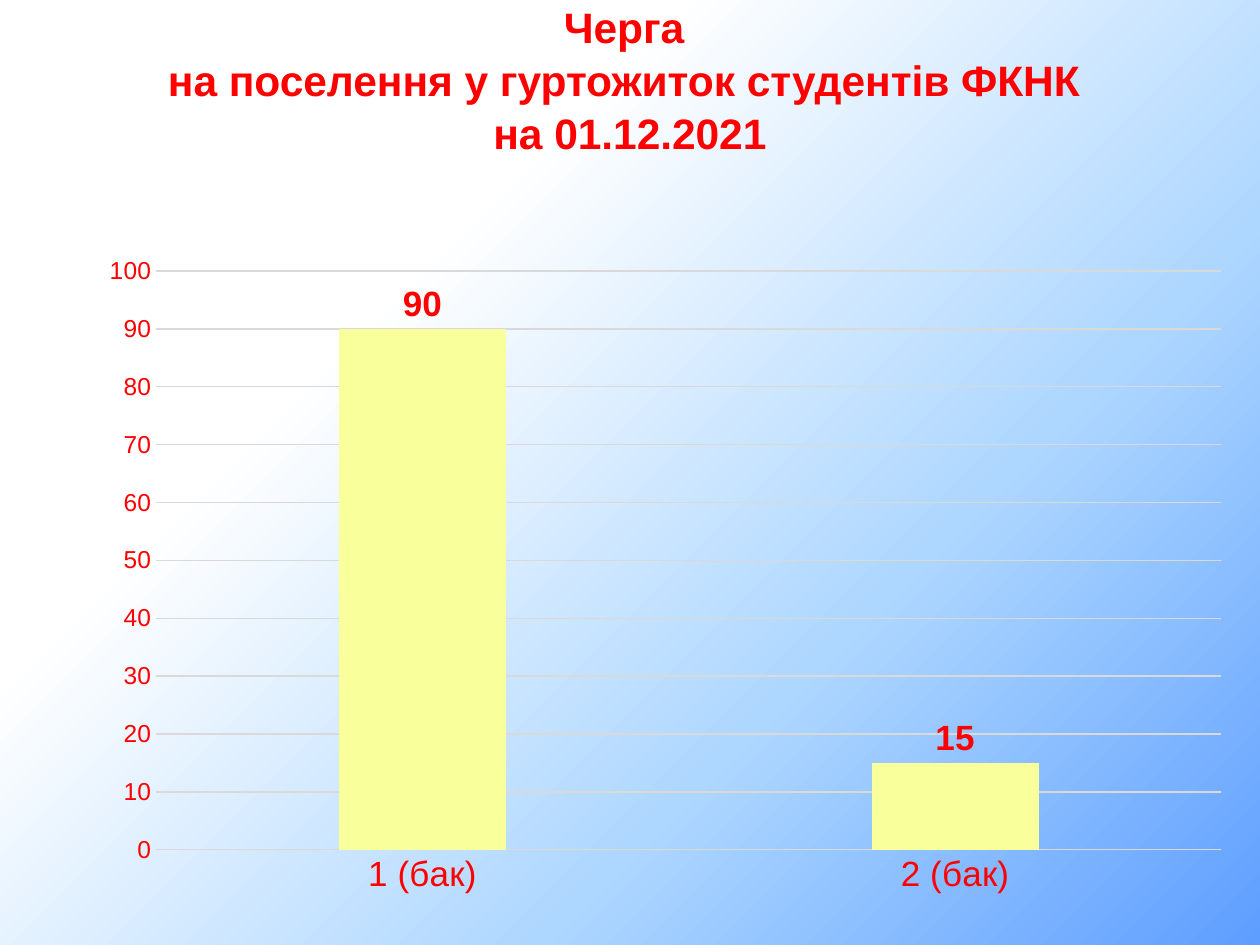
from copy import deepcopy
from typing import NamedTuple

from lxml.etree import SubElement
from pptx import Presentation
from pptx.chart.data import CategoryChartData
from pptx.dml.color import RGBColor
from pptx.enum.chart import XL_CHART_TYPE as ChartType
from pptx.enum.chart import XL_LABEL_POSITION as LabelPos
from pptx.enum.chart import XL_TICK_MARK as Tick
from pptx.enum.text import MSO_ANCHOR as Anchor
from pptx.enum.text import MSO_AUTO_SIZE as AutoSize
from pptx.enum.text import PP_ALIGN as Align
from pptx.oxml import parse_xml
from pptx.oxml.ns import nsdecls, qn
from pptx.util import Cm, Pt

RED = RGBColor(0xFF, 0x00, 0x00)
YELLOW = RGBColor(0xF8, 0xFF, 0x9B)
GRAY = RGBColor(0xD9, 0xD9, 0xD9)
BLACK = RGBColor(0x00, 0x00, 0x00)
FONT = "Arial"


class Stop(NamedTuple):
    position: int
    color: RGBColor
    alpha: int


class Queue(NamedTuple):
    course: str
    students: int


STOPS = [
    Stop(0, RGBColor(0x5E, 0x9E, 0xFF), 52),
    Stop(33, RGBColor(0xAE, 0xD7, 0xFF), 70),
    Stop(69, RGBColor(0xFF, 0xFF, 0xFF), 100),
    Stop(100, RGBColor(0xFF, 0xFF, 0xFF), 0),
]
QUEUES = [Queue("1 (бак)", 90), Queue("2 (бак)", 15)]
TITLE = "Черга \vна поселення у гуртожиток студентів ФКНК \vна 01.12.2021\v"


def set_font(font, size: float, color: RGBColor, bold: bool = False) -> None:
    for name, value in {"name": FONT, "size": Pt(size), "bold": bold}.items():
        setattr(font, name, value)
    font.color.rgb = color


def set_line(line, color: RGBColor) -> None:
    line.color.rgb = color
    line.width = Pt(0.75)


def paint_background(slide) -> None:
    slide.background.fill.solid()
    stops = "".join(
        f'<a:gs pos="{s.position * 1000}"><a:srgbClr val="{s.color}">'
        f'<a:alpha val="{s.alpha * 1000}"/></a:srgbClr></a:gs>'
        for s in STOPS
    )
    gradient = parse_xml(
        f'<a:gradFill {nsdecls("a")} rotWithShape="1"><a:gsLst>{stops}</a:gsLst>'
        '<a:path path="circle"><a:fillToRect l="100000" t="100000"/></a:path>'
        "</a:gradFill>"
    )
    solid = next(slide.element.iter(qn("a:solidFill")))
    solid.getparent().replace(solid, gradient)


def write_title(sp) -> None:
    sp.left, sp.top, sp.width, sp.height = Cm(1.27), Cm(0.76), Cm(22.86), Cm(3.18)
    tf = sp.text_frame
    frame = {"word_wrap": True, "auto_size": AutoSize.NONE,
             "vertical_anchor": Anchor.MIDDLE}
    for name, value in frame.items():
        setattr(tf, name, value)
    p = tf.paragraphs[0]
    p.text = TITLE
    p.alignment = Align.CENTER
    p.line_spacing = 1.04
    for r in p.runs:
        set_font(r.font, 24.3, RED, True)
    # Line breaks take the run format; the closing line is taller
    run_format = p.runs[0].font._element
    for br in p._p.findall(qn("a:br")):
        br.append(deepcopy(run_format))
    SubElement(p._p, qn("a:endParaRPr"), sz="3600")


def add_queue_chart(slide) -> None:
    data = CategoryChartData()
    data.categories = [q.course for q in QUEUES]
    data.add_series("Series 1", [q.students for q in QUEUES])
    chart = slide.shapes.add_chart(
        ChartType.COLUMN_CLUSTERED, Cm(1.75), Cm(4.93), Cm(23.34), Cm(13.41), data
    ).chart
    chart.has_title = False
    chart.has_legend = False
    set_font(chart.font, 10, BLACK)

    # Axes
    cat_axis, val_axis = chart.category_axis, chart.value_axis
    for axis, size in ((cat_axis, 20), (val_axis, 14)):
        axis.major_tick_mark = axis.minor_tick_mark = Tick.NONE
        set_font(axis.tick_labels.font, size, RED)
    set_line(cat_axis.format.line, GRAY)
    val_axis.format.line.fill.background()
    set_line(val_axis.major_gridlines.format.line, GRAY)
    scale = {"minimum_scale": 0, "maximum_scale": 100, "major_unit": 10}
    for name, value in scale.items():
        setattr(val_axis, name, value)

    # Columns and their labels
    plot = chart.plots[0]
    plot.vary_by_categories = False
    plot.gap_width, plot.overlap = 219, -27
    series = plot.series[0]
    series.format.fill.solid()
    series.format.fill.fore_color.rgb = YELLOW
    labels = series.data_labels
    labels.show_value = True
    labels.position = LabelPos.OUTSIDE_END
    set_font(labels.font, 20, RED, True)

    # Inner plot area as fractions of the chart
    area = next(chart._chartSpace.iter(qn("c:plotArea")))
    for old in area.findall(qn("c:layout")):
        area.remove(old)
    places = {"x": 0.06, "y": 0.04, "w": 0.92, "h": 0.87}
    modes = "".join(f'<c:{k}Mode val="edge"/>' for k in "xy")
    sizes = "".join(f'<c:{k} val="{v}"/>' for k, v in places.items())
    area.insert(0, parse_xml(
        f'<c:layout {nsdecls("c")}><c:manualLayout><c:layoutTarget val="inner"/>'
        f"{modes}{sizes}</c:manualLayout></c:layout>"
    ))


def main() -> None:
    prs = Presentation()
    prs.slide_width, prs.slide_height = Cm(25.4), Cm(19.05)
    slide = prs.slides.add_slide(prs.slide_layouts[5])
    paint_background(slide)
    write_title(slide.shapes.title)
    add_queue_chart(slide)
    prs.save("out.pptx")


if __name__ == "__main__":
    main()
